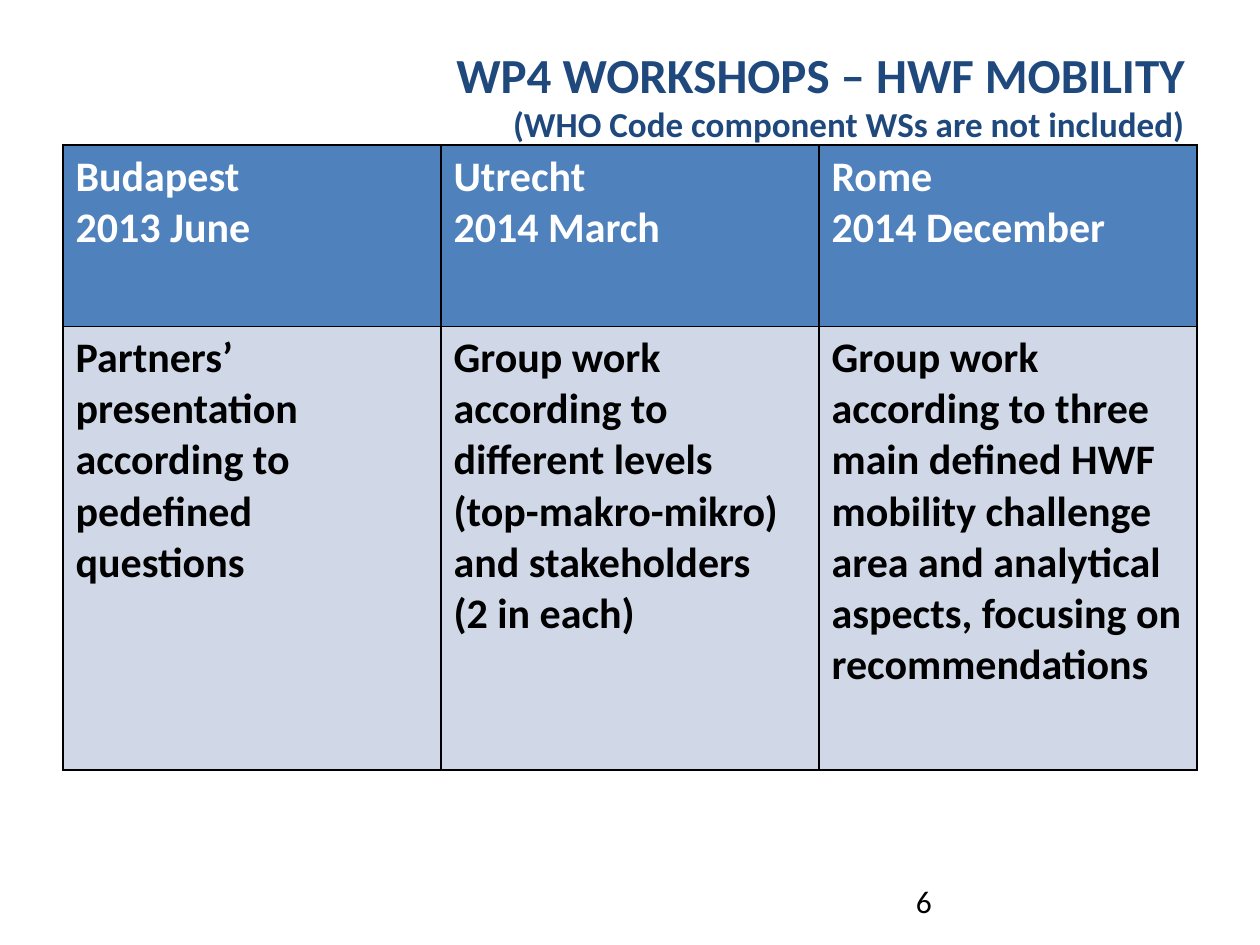
from pptx import Presentation
from pptx.dml.color import RGBColor
from pptx.enum.text import MSO_ANCHOR, PP_ALIGN
from pptx.oxml import parse_xml
from pptx.oxml.ns import nsdecls
from pptx.util import Inches, Pt

HEADERS = ["Budapest\n2013 June", "Utrecht\n2014 March", "Rome\n2014 December"]
ACTIVITIES = [
    "Partners’ presentation according to pedefined questions",
    "Group work according to different levels (top-makro-mikro) and stakeholders\n"
    "(2 in each)",
    "Group work according to three main defined HWF mobility challenge area and "
    "analytical aspects, focusing on recommendations",
]


def color(value):
    return RGBColor.from_string(value)


class SlideBuilder:
    font_name = "Calibri"
    navy = "1F497D"
    blue = "4F81BD"
    pale_blue = "D0D8E8"
    white = "FFFFFF"
    black = "000000"

    def __init__(self, deck):
        self.page = deck.slides.add_slide(deck.slide_layouts[6])

    def format_span(self, span, size, text_color, bold):
        span.font.name = self.font_name
        span.font.size = Pt(size)
        span.font.bold = bold
        span.font.color.rgb = color(text_color)

    def text(self, left, top, width, height, wording, sizes, text_color,
             bold=False, align=PP_ALIGN.LEFT, anchor=MSO_ANCHOR.TOP):
        """Add a one-paragraph box with one size for each line."""
        box = self.page.shapes.add_textbox(
            Inches(left), Inches(top), Inches(width), Inches(height))
        frame = box.text_frame
        frame.word_wrap = True
        frame.vertical_anchor = anchor
        para = frame.paragraphs[0]
        para.text = wording
        para.alignment = align
        for span, size in zip(para.runs, sizes):
            self.format_span(span, size, text_color, bold)

    def cell(self, cell, wording, fill, text_color):
        cell.fill.solid()
        cell.fill.fore_color.rgb = color(fill)
        cell.text_frame.text = wording
        for para in cell.text_frame.paragraphs:
            for span in para.runs:
                self.format_span(span, 24, text_color, True)
        self.borders(cell)

    def borders(self, cell):
        properties = cell._tc.get_or_add_tcPr()
        for position, side in enumerate(("lnL", "lnR", "lnT", "lnB")):
            properties.insert(position, parse_xml(
                f'<a:{side} {nsdecls("a")} w="{Pt(1)}"><a:solidFill>'
                f'<a:srgbClr val="{self.black}"/></a:solidFill></a:{side}>'))

    def table(self, left, top, column_width, row_heights, rows):
        count = len(rows[0])
        table = self.page.shapes.add_table(
            len(rows), count, Inches(left), Inches(top),
            Inches(column_width * count), Inches(sum(row_heights))).table
        for column in table.columns:
            column.width = Inches(column_width)
        styles = [(self.blue, self.white), (self.pale_blue, self.black)]
        for row, height, wordings, style in zip(table.rows, row_heights, rows, styles):
            row.height = Inches(height)
            for cell, wording in zip(row.cells, wordings):
                self.cell(cell, wording, *style)


def main():
    deck = Presentation()
    deck.slide_width, deck.slide_height = Inches(10), Inches(7.5)
    builder = SlideBuilder(deck)
    builder.text(
        0.5, 0.3, 9, 0.85,
        "WP4 WORKSHOPS – HWF MOBILITY\v(WHO Code component WSs are not included)",
        [28, 20], builder.navy, bold=True, align=PP_ALIGN.RIGHT)
    builder.table(0.5, 1.15, 3, [1.44, 3.52], [HEADERS, ACTIVITIES])
    builder.text(7.17, 6.95, 2.33, 0.4, "6", [18], builder.black,
                 anchor=MSO_ANCHOR.MIDDLE)
    deck.save("out.pptx")


if __name__ == "__main__":
    main()
